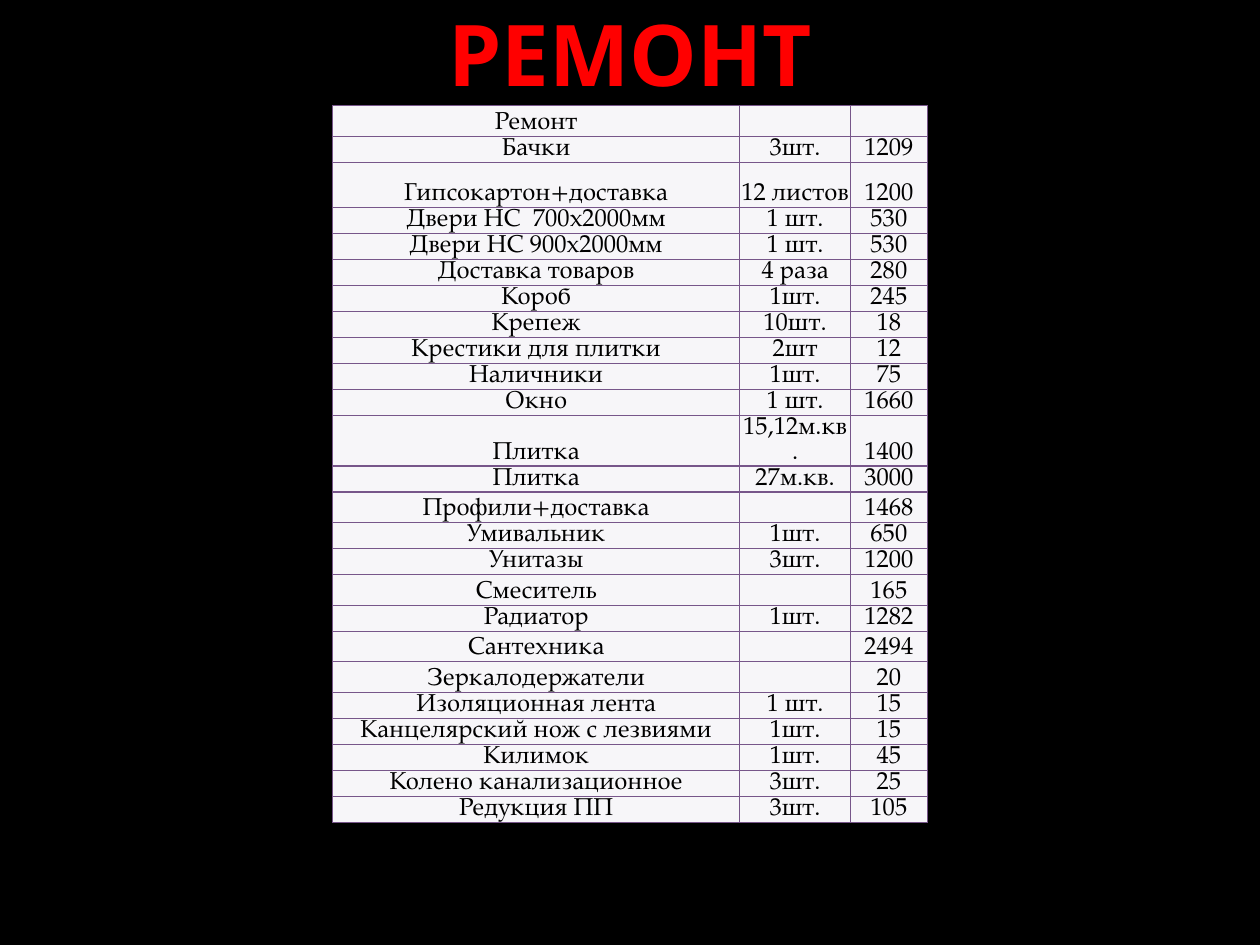
from lxml import etree
from pptx import Presentation
from pptx.dml.color import RGBColor
from pptx.enum.text import MSO_ANCHOR, PP_ALIGN
from pptx.oxml.ns import qn
from pptx.util import Inches, Pt

CENTER = PP_ALIGN.CENTER
MIDDLE = MSO_ANCHOR.MIDDLE
BOTTOM = MSO_ANCHOR.BOTTOM

BLACK, RED = "000000", "FF0000"
CELL_FILL, BORDER = "F7F6F9", "77568A"

COLUMN_WIDTHS = (3.23, 0.88, 0.61)
ROW_HEIGHT = 0.19
TALL_ROWS = {0: 0.23, 2: 0.36, 11: 0.36}

# Item, quantity, cost
EXPENSES = [
    ("Ремонт", "", ""),
    ("Бачки", "3шт.", "1209"),
    ("Гипсокартон+доставка", "12 листов", "1200"),
    ("Двери НС  700х2000мм", "1 шт.", "530"),
    ("Двери НС 900х2000мм", "1 шт.", "530"),
    ("Доставка товаров", "4 раза", "280"),
    ("Короб", "1шт.", "245"),
    ("Крепеж", "10шт.", "18"),
    ("Крестики для плитки", "2шт", "12"),
    ("Наличники", "1шт.", "75"),
    ("Окно", "1 шт.", "1660"),
    ("Плитка", "15,12м.кв.", "1400"),
    ("Плитка", "27м.кв.", "3000"),
    ("Профили+доставка", "", "1468"),
    ("Умивальник", "1шт.", "650"),
    ("Унитазы", "3шт.", "1200"),
    ("Смеситель", "", "165"),
    ("Радиатор", "1шт.", "1282"),
    ("Сантехника", "", "2494"),
    ("Зеркалодержатели", "", "20"),
    ("Изоляционная лента", "1 шт.", "15"),
    ("Канцелярский нож с лезвиями", "1шт.", "15"),
    ("Килимок", "1шт.", "45"),
    ("Колено канализационное", "3шт.", "25"),
    ("Редукция ПП", "3шт.", "105"),
]


def color(hex_string):
    return RGBColor.from_string(hex_string)


def style_paragraph(paragraph, font_name, size, hex_string, bold=False):
    paragraph.alignment = CENTER
    font = paragraph.font
    font.name, font.size, font.bold = font_name, Pt(size), bold
    font.color.rgb = color(hex_string)


def add_borders(cell):
    properties = cell._tc.get_or_add_tcPr()
    for side in ("a:lnL", "a:lnR", "a:lnT", "a:lnB"):
        line = etree.SubElement(properties, qn(side), w=str(Pt(0.75)))
        fill = etree.SubElement(line, qn("a:solidFill"))
        etree.SubElement(fill, qn("a:srgbClr"), val=BORDER)


def fill_cell(cell, text):
    cell.text = text
    cell.vertical_anchor = BOTTOM
    cell.margin_left = cell.margin_right = cell.margin_top = Inches(0.01)
    cell.margin_bottom = 0
    paragraph = cell.text_frame.paragraphs[0]
    style_paragraph(paragraph, "TeX Gyre Pagella", 14, BLACK)
    paragraph.line_spacing = Pt(14.1)
    add_borders(cell)
    cell.fill.solid()
    cell.fill.fore_color.rgb = color(CELL_FILL)


def add_title(slide, left, top, width, height):
    heading = slide.shapes.add_textbox(left, top, width, height).text_frame
    heading.word_wrap = True
    heading.vertical_anchor = MIDDLE
    heading.text = "РЕМОНТ"
    style_paragraph(heading.paragraphs[0], "Noto Sans", 48.6, RED, bold=True)


def add_expenses(slide, left, top, width, height):
    expenses = slide.shapes.add_table(
        len(EXPENSES), len(COLUMN_WIDTHS), left, top, width, height).table
    expenses.first_row = expenses.horz_banding = False
    for column, column_width in zip(expenses.columns, COLUMN_WIDTHS):
        column.width = Inches(column_width)
    for index, expense in enumerate(EXPENSES):
        expenses.rows[index].height = Inches(TALL_ROWS.get(index, ROW_HEIGHT))
        for cell, text in zip(expenses.rows[index].cells, expense):
            fill_cell(cell, text)


def main():
    presentation = Presentation()
    presentation.slide_width, presentation.slide_height = Inches(10), Inches(7.5)
    slide = presentation.slides.add_slide(presentation.slide_layouts[6])
    slide.background.fill.solid()
    slide.background.fill.fore_color.rgb = color(BLACK)

    add_title(slide, Inches(0.5), Inches(0), Inches(9), Inches(0.84))
    add_expenses(slide, Inches(2.64), Inches(0.84), Inches(4.72), Inches(5.13))
    presentation.save("out.pptx")


if __name__ == "__main__":
    main()
